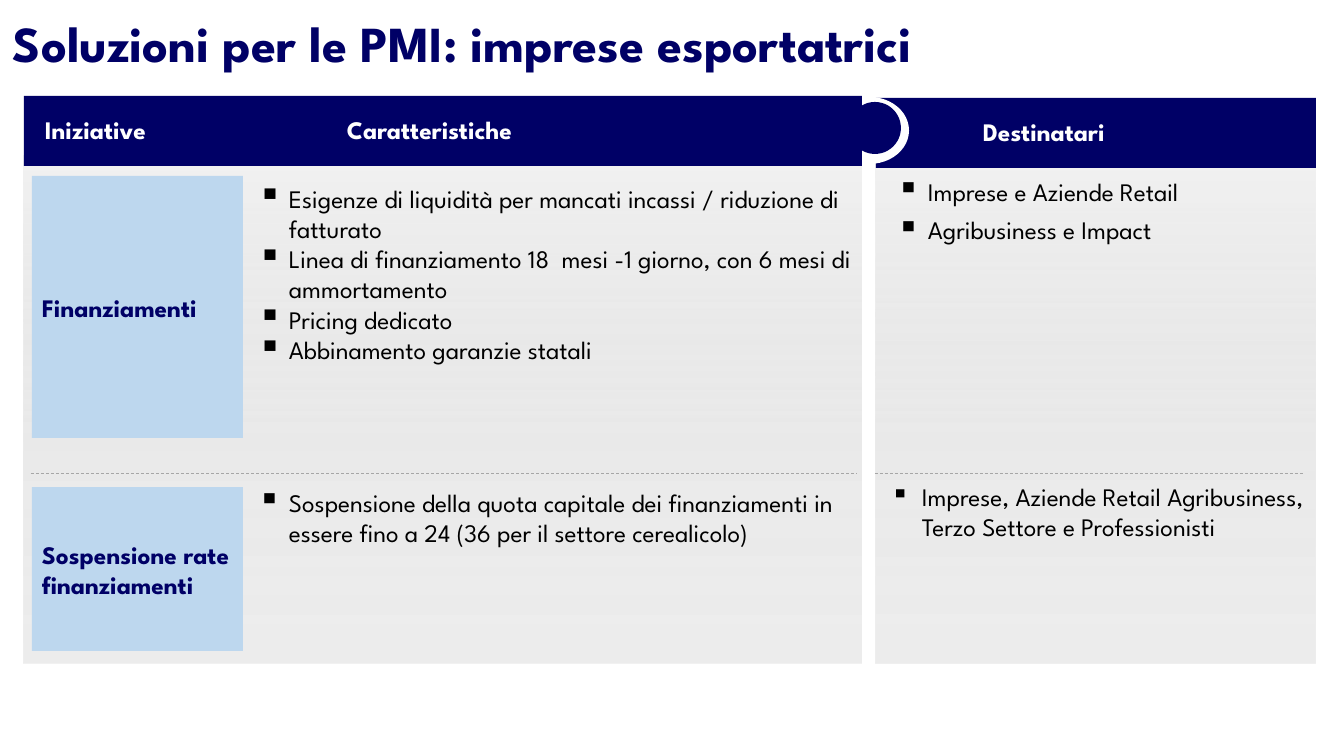
from dataclasses import dataclass

from lxml import etree
from pptx import Presentation
from pptx.dml.color import RGBColor
from pptx.enum.dml import MSO_LINE
from pptx.enum.shapes import MSO_CONNECTOR, MSO_SHAPE
from pptx.enum.text import MSO_ANCHOR, PP_ALIGN
from pptx.oxml.ns import qn
from pptx.util import Emu, Pt

RECTANGLE, PIE, OVAL = MSO_SHAPE.RECTANGLE, MSO_SHAPE.PIE, MSO_SHAPE.OVAL
STRAIGHT = MSO_CONNECTOR.STRAIGHT
DASH = MSO_LINE.DASH
TOP, MIDDLE = MSO_ANCHOR.TOP, MSO_ANCHOR.MIDDLE
LEFT = PP_ALIGN.LEFT
EMU_PER_INCH = 914400
PX_PER_INCH = 100.8


@dataclass(frozen=True)
class Theme:
    font: str = "League Spartan"
    navy: str = "000066"
    sky: str = "BDD7EE"
    white: str = "FFFFFF"
    black: str = "000000"
    rule: str = "A6A6A6"
    title_size: int = 36
    body_size: int = 18
    # position %, colour, opacity %
    panel_stops: tuple = ((0, "D9D9D9", 46), (48, "D9D9D9", 56), (100, "F2F2F2", 100))


@dataclass(frozen=True)
class Area:
    left: int
    top: int
    width: int
    height: int


@dataclass(frozen=True)
class BulletList:
    area: Area
    items: tuple[str, ...]
    bullet_percent: int
    space_after: int = 0


@dataclass(frozen=True)
class Initiative:
    name: str
    area: Area


@dataclass(frozen=True)
class Rule:
    start: int
    end: int


THEME = Theme()
PANELS = (Area(24, 156, 838, 508), Area(876, 156, 440, 508))
HEADERS = (Area(24, 96, 838, 70), Area(876, 98, 440, 70))
RULE_Y = 473
RULES = (Rule(31, 857), Rule(875, 1303))
INITIATIVES = (
    Initiative("Finanziamenti", Area(32, 176, 211, 262)),
    Initiative("Sospensione rate finanziamenti", Area(32, 487, 211, 164)),
)
LISTS = (
    BulletList(Area(258, 183, 610, 214), (
        "Esigenze di liquidità per mancati incassi / riduzione di fatturato",
        "Linea di finanziamento 18  mesi -1 giorno, con 6 mesi di ammortamento",
        "Pricing dedicato",
        "Abbinamento garanzie statali",
    ), 130),
    BulletList(Area(258, 487, 606, 127), (
        "Sospensione della quota capitale dei finanziamenti in essere "
        "fino a 24 (36 per il settore cerealicolo)",
    ), 124, 6),
    BulletList(Area(897, 176, 427, 70),
               ("Imprese e Aziende Retail", "Agribusiness e Impact"), 124, 6),
    BulletList(Area(891, 481, 427, 92), (
        "Imprese, Aziende Retail Agribusiness, Terzo Settore e Professionisti",
    ), 100),
)
BULLET_INDENT = 31
FEATURES_TAB = 302


def px(length: int) -> Emu:
    return Emu(round(length * EMU_PER_INCH / PX_PER_INCH))


def bounds(area: Area) -> tuple:
    return px(area.left), px(area.top), px(area.width), px(area.height)


def add_block(page, kind, area: Area, color: str):
    block = page.shapes.add_shape(kind, *bounds(area))
    block.shadow.inherit = False
    block.line.fill.background()
    block.fill.solid()
    block.fill.fore_color.rgb = RGBColor.from_string(color)
    return block


def add_panel(page, area: Area) -> None:
    panel = add_block(page, RECTANGLE, area, THEME.white)
    panel.fill.gradient()
    panel.fill.gradient_angle = 90
    stops = panel._element.spPr.find(qn("a:gradFill")).find(qn("a:gsLst"))
    for stop in list(stops):
        stops.remove(stop)
    for position, color, opacity in THEME.panel_stops:
        stop = etree.SubElement(stops, qn("a:gs"), pos=str(position * 1000))
        tint = etree.SubElement(stop, qn("a:srgbClr"), val=color)
        etree.SubElement(tint, qn("a:alpha"), val=str(opacity * 1000))


def add_rule(page, rule: Rule) -> None:
    line = page.shapes.add_connector(
        STRAIGHT, px(rule.start), px(RULE_Y), px(rule.end), px(RULE_Y))
    line.line.color.rgb = RGBColor.from_string(THEME.rule)
    line.line.width = Pt(0.5)
    line.line.dash_style = DASH
    etree.SubElement(line._element.spPr, qn("a:effectLst"))


def style(para, color: str, size: int = THEME.body_size, bold: bool = True) -> None:
    para.alignment = LEFT
    para.font.name = THEME.font
    para.font.size = Pt(size)
    para.font.bold = bold
    para.font.color.rgb = RGBColor.from_string(color)


def add_text_frame(page, area: Area, inset: bool):
    frame = page.shapes.add_textbox(*bounds(area)).text_frame
    frame.word_wrap = True
    frame.vertical_anchor = TOP
    if not inset:
        frame.margin_left = frame.margin_right = 0
        frame.margin_top = frame.margin_bottom = 0
    return frame


def add_label(page, area: Area, text: str, tab: int = 0) -> None:
    para = add_text_frame(page, area, True).paragraphs[0]
    para.text = text
    if tab:
        tabs = etree.SubElement(para._p.get_or_add_pPr(), qn("a:tabLst"))
        etree.SubElement(tabs, qn("a:tab"), pos=str(px(tab)), algn="l")
    style(para, THEME.white)


def add_initiative(page, initiative: Initiative) -> None:
    box = add_block(page, RECTANGLE, initiative.area, THEME.sky)
    frame = box.text_frame
    frame.word_wrap = True
    frame.vertical_anchor = MIDDLE
    frame.text = initiative.name
    style(frame.paragraphs[0], THEME.navy)


def add_list(page, bullets: BulletList) -> None:
    frame = add_text_frame(page, bullets.area, False)
    for index, item in enumerate(bullets.items):
        para = frame.add_paragraph() if index else frame.paragraphs[0]
        para.text = item
        para.space_after = Pt(bullets.space_after)
        properties = para._p.get_or_add_pPr()
        properties.set("marL", str(px(BULLET_INDENT)))
        properties.set("indent", str(-px(BULLET_INDENT)))
        etree.SubElement(properties, qn("a:buSzPct"), val=str(bullets.bullet_percent * 1000))
        etree.SubElement(properties, qn("a:buChar"), char="▪")
        style(para, THEME.black, bold=False)


def main() -> None:
    deck = Presentation()
    deck.slide_width, deck.slide_height = px(1344), px(756)
    page = deck.slides.add_slide(deck.slide_layouts[6])

    # Title
    title = add_text_frame(page, Area(13, 12, 1308, 39), False).paragraphs[0]
    title.text = "Soluzioni per le PMI: imprese esportatrici"
    style(title, THEME.navy, THEME.title_size)

    # Panels and rows
    for panel in PANELS:
        add_panel(page, panel)
    for initiative in INITIATIVES:
        add_initiative(page, initiative)
    for rule in RULES:
        add_rule(page, rule)
    for bullets in LISTS:
        add_list(page, bullets)

    # Column headers
    for header in HEADERS:
        add_block(page, RECTANGLE, header, THEME.navy)
    add_label(page, Area(35, 109, 678, 40), "Iniziative\tCaratteristiche", FEATURES_TAB)
    add_label(page, Area(973, 111, 288, 72), "Destinatari")

    # Joint between the headers
    ring = add_block(page, PIE, Area(830, 97, 79, 67), THEME.white)
    ring.adjustments[0], ring.adjustments[1] = 155.5, 60.1
    add_block(page, OVAL, Area(849, 102, 52, 52), THEME.navy)

    deck.save("out.pptx")


if __name__ == "__main__":
    main()
